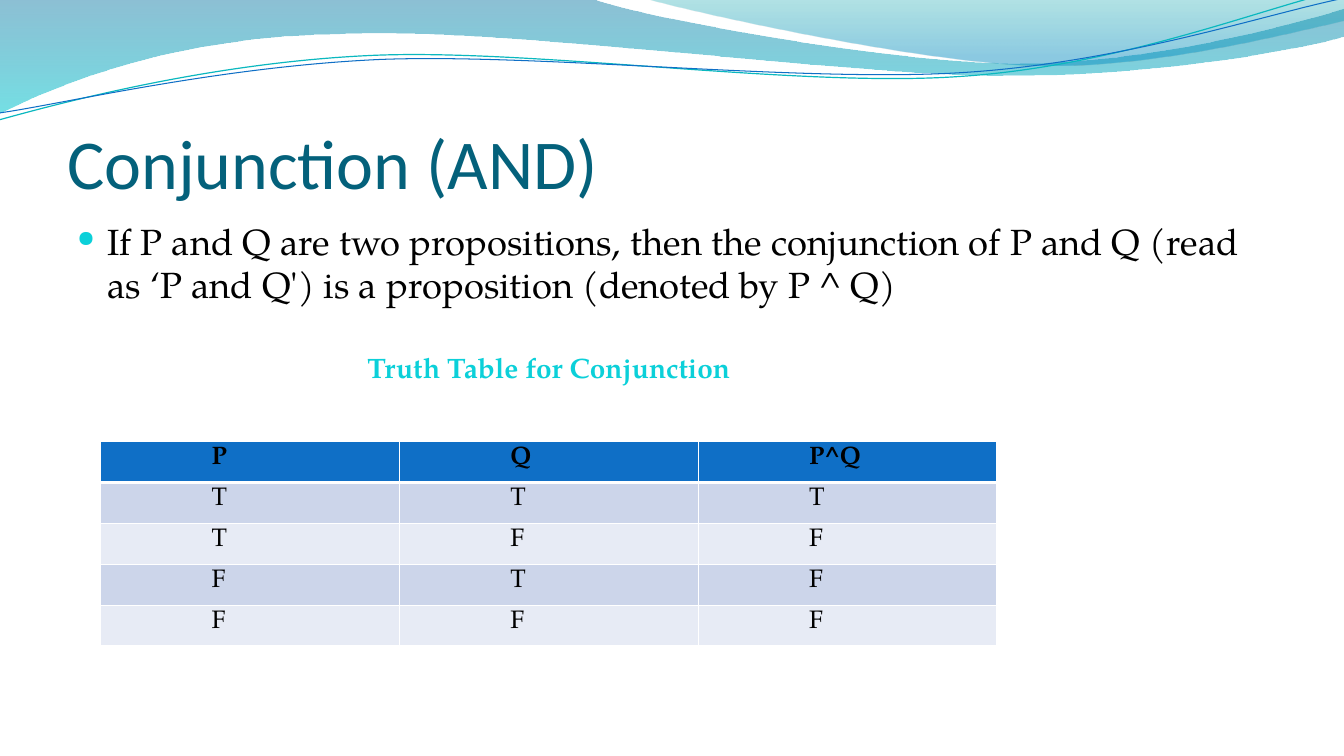
from dataclasses import dataclass
from math import cos, radians, sin

from pptx import Presentation
from pptx.dml.color import RGBColor
from pptx.enum.text import MSO_ANCHOR, MSO_AUTO_SIZE, PP_ALIGN
from pptx.oxml import parse_xml
from pptx.oxml.ns import nsdecls, qn
from pptx.util import Inches, Pt

TITLE = "Conjunction (AND)"
DEFINITION = ("If P and Q are two propositions, then the conjunction of P and Q "
              "(read as ‘P and Q') is a proposition (denoted by P ^ Q)")
CAPTION = "Truth Table for Conjunction"
TRUTH_TABLE = [
    ("P", "Q", "P^Q"),
    ("T", "T", "T"),
    ("T", "F", "F"),
    ("F", "T", "F"),
    ("F", "F", "F"),
]

# Each segment holds one end point, or two control points and an end point.
# Gradient stops are (position, colour, opacity in percent).
BANDS = [
    ([[(0, 0)],
      [(5.87, -0.01)],
      [(6.34, 0.17), (8.85, 0.63), (10.11, 0.63)],
      [(11.38, 0.63), (12.78, 0.26), (13.33, 0.09)],
      [(13.35, 0.36)],
      [(13.11, 0.44), (11.6, 0.76), (9.94, 0.75)],
      [(8.29, 0.75), (5.09, 0.28), (3.43, 0.34)],
      [(1.72, 0.36), (0.61, 0.83), (-0.01, 1.13)],
      [(0, 0)]],
     [(0, "0074A1", 45), (1, "00C6CF", 55)]),
    ([[(6.39, -0.01)],
      [(6.79, 0.11), (9.09, 0.62), (10.25, 0.65)],
      [(11.41, 0.69), (12.82, 0.32), (13.33, 0.21)],
      [(13.33, 0)],
      [(6.39, -0.01)]],
     [(0, "00A1A9", 30), (0.8, "008BBF", 45)]),
]
# Each strand has its outline, the centre it is turned about, colour and weight.
STRANDS = [
    ([[(-0.01, 1.19)],
      [(0.64, 1.01), (2.11, 0.62), (3.69, 0.55)],
      [(5.27, 0.48), (7.9, 0.87), (9.5, 0.76)],
      [(11.1, 0.66), (12.52, 0.08), (13.31, -0.1)]],
     (6.65, 0.57), "0AB8BF", 0.85),
    ([[(0, 1.12)],
      [(0.63, 1.03), (2.18, 0.66), (3.78, 0.59)],
      [(5.37, 0.53), (7.96, 0.82), (9.55, 0.72)],
      [(11.15, 0.62), (12.55, 0.14), (13.34, -0.02)]],
     (6.67, 0.59), "0F6FC6", 0.75),
]
STRAND_TILT = -2.7


@dataclass(frozen=True)
class Theme:
    heading_font: str = "Calibri"
    body_font: str = "TeX Gyre Pagella"
    heading: str = "04617B"
    ink: str = "000000"
    accent: str = "0BD0D9"
    header: str = "0F6FC6"
    stripes: tuple = ("E7EBF5", "CCD5EA")
    rule: str = "FFFFFF"
    title_size: int = 50
    body_size: int = 26
    caption_size: int = 20
    cell_size: int = 18
    bullet_percent: int = 62


THEME = Theme()
WIDTH, HEIGHT = 13.33, 7.5
MARGIN, CONTENT = 0.05 * WIDTH, 0.9 * WIDTH
TABLE_LEFT, TABLE_TOP = 0.075 * WIDTH, 4.38
TABLE_WIDTH, TABLE_HEIGHT = 8.89, 2.03


def write(paragraph, text, size, color=THEME.ink, font=THEME.body_font,
          bold=False, before=0, left=0, hanging=0, bullet=None):
    paragraph.alignment = PP_ALIGN.LEFT
    paragraph.space_before = Pt(before)
    run = paragraph.add_run()
    run.text = text
    run.font.name, run.font.size, run.font.bold = font, Pt(size), bold
    run.font.color.rgb = RGBColor.from_string(color)
    layout = paragraph._p.get_or_add_pPr()
    layout.set("marL", str(Inches(left)))
    layout.set("indent", str(-Inches(hanging)))
    if bullet:
        for tag in (f'<a:buClr {nsdecls("a")}><a:srgbClr val="{THEME.accent}"/></a:buClr>',
                    f'<a:buSzPct {nsdecls("a")} val="{THEME.bullet_percent * 1000}"/>',
                    f'<a:buChar {nsdecls("a")} char="{bullet}"/>'):
            layout.append(parse_xml(tag))


def turn(outline, center, degrees):
    c, s = cos(radians(degrees)), sin(radians(degrees))
    cx, cy = center
    return [[(cx + (x - cx) * c - (y - cy) * s, cy + (x - cx) * s + (y - cy) * c)
             for x, y in segment] for segment in outline]


def add_wave(slide, outline, close):
    """Draw the points as lines, then join each three of a curve into one Bézier."""
    start, *points = [(Inches(x), Inches(y)) for segment in outline for x, y in segment]
    builder = slide.shapes.build_freeform(*start, scale=1)
    builder.add_line_segments(points, close=close)
    wave = builder.convert_to_shape()
    wave.shadow.inherit = False
    lines = iter(list(wave._element.iter(qn("a:lnTo"))))
    for segment in outline[1:]:
        parts = [next(lines) for _ in segment]
        if len(parts) == 3:
            curve = parse_xml(f'<a:cubicBezTo {nsdecls("a")}/>')
            parts[0].addprevious(curve)
            for part in parts:
                curve.append(part[0])
                part.getparent().remove(part)
    return wave


def add_waves(slide):
    for outline, stops in BANDS:
        band = add_wave(slide, outline, close=True)
        band.line.fill.background()
        band.fill.gradient()
        band.fill.gradient_angle = 270
        for stop, (position, color, opacity) in zip(band.fill.gradient_stops, stops):
            stop.position = position
            stop.color.rgb = RGBColor.from_string(color)
            tint = stop._gs.find(qn("a:srgbClr"))
            tint.append(parse_xml(f'<a:alpha {nsdecls("a")} val="{opacity * 1000}"/>'))
    for outline, center, color, weight in STRANDS:
        strand = add_wave(slide, turn(outline, center, -STRAND_TILT), close=False)
        strand.rotation = STRAND_TILT
        strand.fill.background()
        strand.line.color.rgb = RGBColor.from_string(color)
        strand.line.width = Pt(weight)


def place_title(slide):
    title = slide.shapes.title
    title.left, title.top = Inches(MARGIN), Inches(0.77)
    title.width, title.height = Inches(CONTENT), Inches(1.25)
    frame = title.text_frame
    frame.auto_size = MSO_AUTO_SIZE.NONE
    frame.vertical_anchor = MSO_ANCHOR.BOTTOM
    frame.margin_left = frame.margin_right = frame.margin_bottom = 0
    frame.margin_top = Inches(0.05)
    write(frame.paragraphs[0], TITLE, THEME.title_size, color=THEME.heading,
          font=THEME.heading_font)
    slide.shapes._spTree.append(title._element)  # in front of the waves


def add_body(slide):
    body = slide.shapes.add_textbox(Inches(MARGIN), Inches(2.12),
                                    Inches(CONTENT), Inches(4.8))
    frame = body.text_frame
    frame.word_wrap = True
    write(frame.paragraphs[0], DEFINITION, THEME.body_size, before=5,
          left=0.3, hanging=0.3, bullet="●")
    write(frame.add_paragraph(), CAPTION, THEME.caption_size, color=THEME.accent,
          bold=True, before=32, left=2.88)


def set_borders(cell, **weights):
    properties = cell._tc.get_or_add_tcPr()
    for side in "LRTB":
        properties.append(parse_xml(
            f'<a:ln{side} {nsdecls("a")} w="{Pt(weights.get(side, 1))}"><a:solidFill>'
            f'<a:srgbClr val="{THEME.rule}"/></a:solidFill></a:ln{side}>'))


def add_truth_table(slide):
    table = slide.shapes.add_table(len(TRUTH_TABLE), len(TRUTH_TABLE[0]),
                                   Inches(TABLE_LEFT), Inches(TABLE_TOP),
                                   Inches(TABLE_WIDTH), Inches(TABLE_HEIGHT)).table
    heavy = {0: {"B": 3}, 1: {"T": 3}}
    for r, values in enumerate(TRUTH_TABLE):
        for c, value in enumerate(values):
            cell = table.cell(r, c)
            write(cell.text_frame.paragraphs[0], value, THEME.cell_size,
                  bold=r == 0, left=1)
            set_borders(cell, **heavy.get(r, {}))
            cell.fill.solid()
            cell.fill.fore_color.rgb = RGBColor.from_string(
                THEME.stripes[r % 2] if r else THEME.header)


def main():
    deck = Presentation()
    deck.slide_width, deck.slide_height = Inches(WIDTH), Inches(HEIGHT)
    slide = deck.slides.add_slide(deck.slide_layouts.get_by_name("Title Only"))
    add_waves(slide)
    place_title(slide)
    add_body(slide)
    add_truth_table(slide)
    deck.save("out.pptx")


if __name__ == "__main__":
    main()
